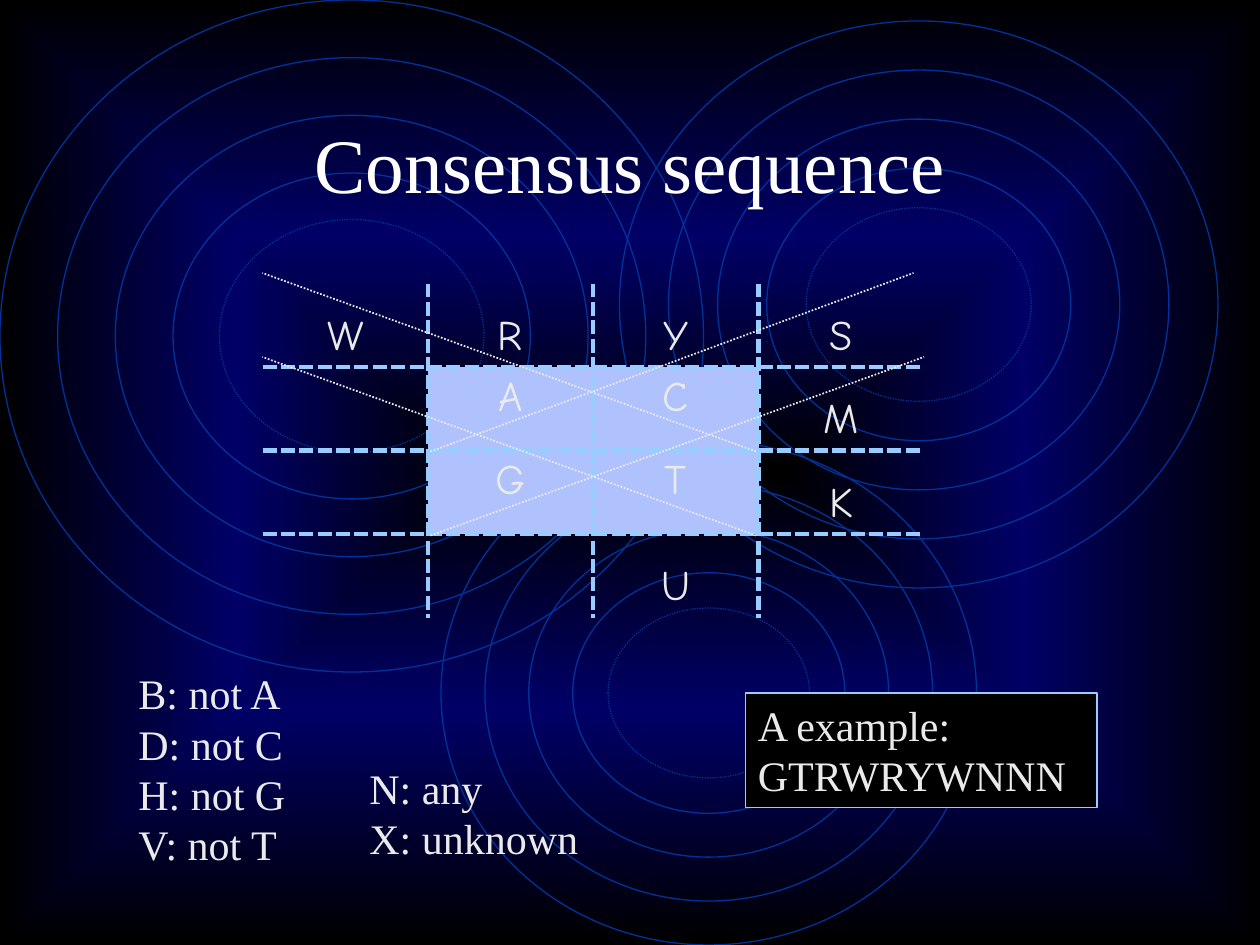
from pptx import Presentation
from pptx.dml.color import RGBColor
from pptx.enum.dml import MSO_LINE
from pptx.enum.shapes import MSO_CONNECTOR, MSO_SHAPE
from pptx.enum.text import MSO_ANCHOR as ANCHOR, PP_ALIGN as ALIGN
from pptx.oxml import parse_xml
from pptx.oxml.ns import nsdecls
from pptx.util import Pt

COLORS = {"black": "000000", "navy": "000066", "ring": "003399", "text": "EAEAEA",
          "title": "FFFFFF", "border": "99CCFF", "base": "AFC2FD"}
SERIF, HAND = "Times New Roman", "Comic Neue"


def rgb(name):
    return RGBColor.from_string(COLORS[name])


class Deck:
    """Hold the style and the current slide, and draw each kind of element."""

    def __init__(self, prs):
        self.s = prs.slides.add_slide(prs.slide_layouts[6])

    def background(self, *stops):
        step = 100000 // (len(stops) - 1)
        gs = "".join(f'<a:gs pos="{i * step}"><a:srgbClr val="{COLORS[c]}"/></a:gs>'
                     for i, c in enumerate(stops))
        self.s._element.cSld.insert(0, parse_xml(
            f'<p:bg {nsdecls("p", "a")}><p:bgPr><a:gradFill rotWithShape="0">'
            f'<a:gsLst>{gs}</a:gsLst><a:path path="shape">'
            '<a:fillToRect l="50000" t="50000" r="50000" b="50000"/></a:path>'
            '</a:gradFill><a:effectLst/></p:bgPr></p:bg>'))

    def stroke(self, line, color, width, dash=None):
        line.color.rgb = rgb(color)
        line.width = Pt(width)
        if dash:
            line.dash_style = dash

    def shape(self, kind, box, line, width, fill=None, dash=None):
        sp = self.s.shapes.add_shape(kind, *map(Pt, box))
        sp.shadow.inherit = False
        if fill:
            sp.fill.solid()
            sp.fill.fore_color.rgb = rgb(fill)
        else:
            sp.fill.background()
        self.stroke(sp.line, line, width, dash)
        return sp

    def rings(self, x, y, w, h):
        for inset in (0, 0.082, 0.164, 0.246, 0.312):
            d = w * inset
            dash = MSO_LINE.ROUND_DOT if inset == 0.312 else None
            self.shape(MSO_SHAPE.OVAL, (x + d, y + d, w - 2 * d, h - 2 * d),
                       "ring", 0.75, dash=dash)

    def set_text(self, tf, lines, size=24, font=SERIF, color="text", align=ALIGN.LEFT,
                 anchor=ANCHOR.TOP, wrap=True):
        tf.word_wrap = wrap
        tf.vertical_anchor = anchor
        for i, text in enumerate(lines):
            p = tf.add_paragraph() if i else tf.paragraphs[0]
            p.text = text
            p.alignment = align
            p.font.size = Pt(size)
            p.font.name = font
            p.font.color.rgb = rgb(color)

    def text(self, box, lines, **style):
        self.set_text(self.s.shapes.add_textbox(*map(Pt, box)).text_frame, lines, **style)

    def panel(self, box, lines):
        sp = self.shape(MSO_SHAPE.RECTANGLE, box, "border", 1, fill="black")
        self.set_text(sp.text_frame, lines, wrap=False)

    def borders(self, cell, **edges):
        tcPr = cell._tc.get_or_add_tcPr()
        dashed = (f'<a:solidFill><a:srgbClr val="{COLORS["border"]}"/></a:solidFill>'
                  '<a:prstDash val="sysDash"/>')
        for i, (side, drawn) in enumerate(edges.items()):
            tcPr.insert(i, parse_xml(f'<a:ln{side} {nsdecls("a")} w="38100">'
                                     f'{dashed if drawn else "<a:noFill/>"}</a:ln{side}>'))

    def table(self, box, rows):
        n, m = len(rows), len(rows[0])
        table = self.s.shapes.add_table(n, m, *map(Pt, box)).table
        table.first_row = table.horz_banding = False
        for r, row in enumerate(rows):
            for c, letter in enumerate(row):
                cell = table.cell(r, c)
                inner = 0 < r < n - 1 and 0 < c < m - 1
                if inner:
                    cell.fill.solid()
                    cell.fill.fore_color.rgb = rgb("base")
                else:
                    cell.fill.background()
                self.borders(cell, L=c > 0, R=c < m - 1, T=r > 0, B=r < n - 1)
                if letter.strip():
                    self.set_text(cell.text_frame, [letter], font=HAND, align=ALIGN.CENTER)
                    cell.vertical_anchor = ANCHOR.TOP if inner else ANCHOR.BOTTOM
                    cell.text_frame.paragraphs[0].space_before = Pt(4.8)

    def line(self, *ends):
        sp = self.s.shapes.add_connector(MSO_CONNECTOR.STRAIGHT, *map(Pt, ends))
        self.stroke(sp.line, "text", 1, MSO_LINE.ROUND_DOT)
        sp._element.spPr.append(parse_xml(f'<a:effectLst {nsdecls("a")}/>'))


def main():
    prs = Presentation()
    prs.slide_width, prs.slide_height = Pt(720), Pt(540)
    deck = Deck(prs)
    deck.background("black", "navy", "black")
    for box in ((0, 0, 402, 384), (252, 252, 306, 288), (354, 12, 342, 324)):
        deck.rings(*box)
    deck.text((54, 48, 612, 90), ["Consensus sequence"], size=44, color="title",
              align=ALIGN.CENTER, anchor=ANCHOR.MIDDLE)
    deck.table((150, 162, 378, 191), ["WRYS", " ACM", " GTK", "  U "])
    for ends in ((246, 306, 528, 204), (432, 306, 150, 204),
                 (432, 258, 150, 156), (246, 258, 522, 156)):
        deck.line(*ends)
    deck.text((72, 378, 107, 122), ["B: not A", "D: not C", "H: not G", "V: not T"],
              wrap=False)
    deck.text((204, 432, 138, 94), ["N: any", "X: unknown"])
    deck.panel((426, 396, 201, 65.5), ["A example:", "GTRWRYWNNN"])
    prs.save("out.pptx")


if __name__ == "__main__":
    main()
